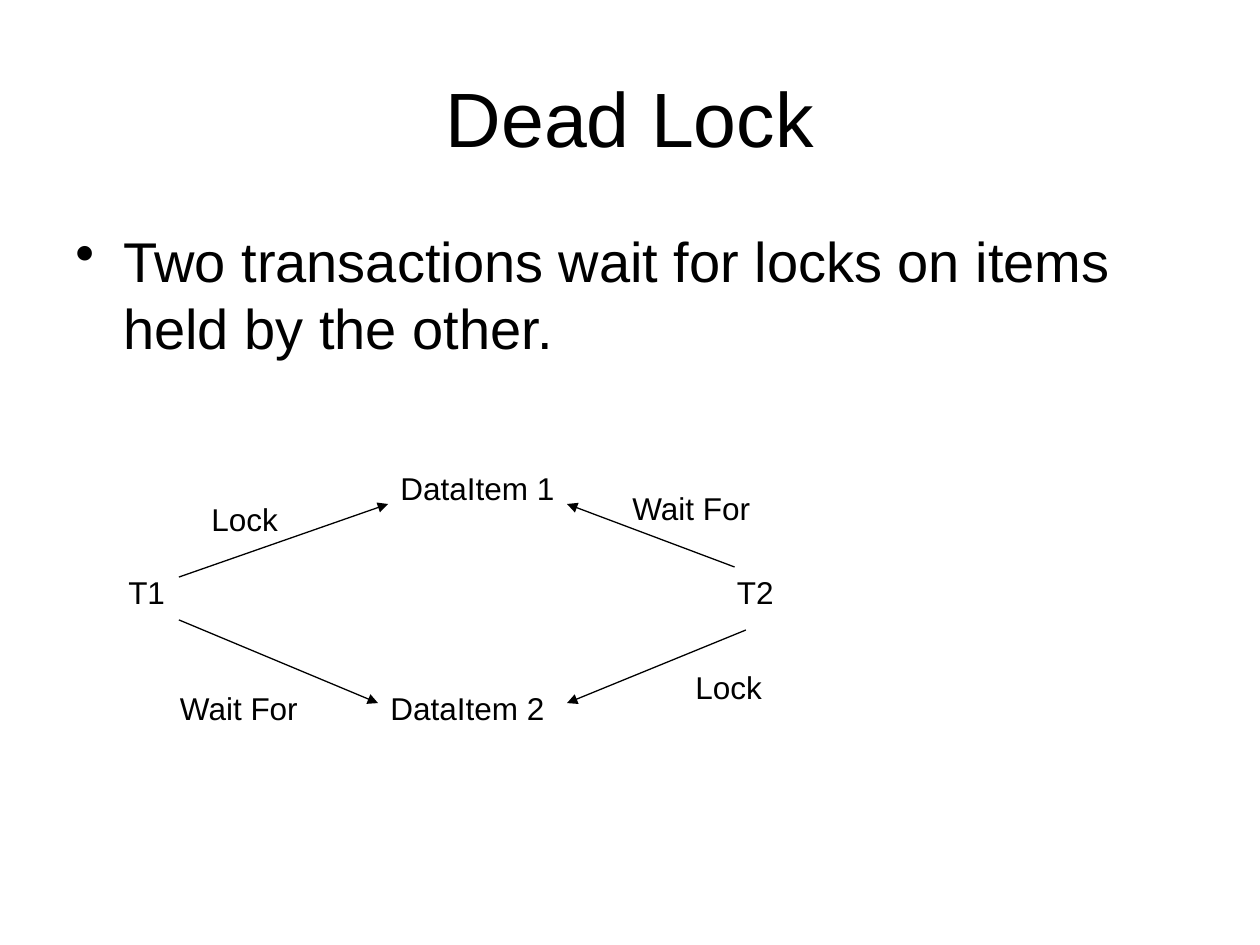
from pptx import Presentation
from pptx.dml.color import RGBColor
from pptx.enum.shapes import MSO_CONNECTOR as Link
from pptx.enum.text import MSO_ANCHOR as Anchor, PP_ALIGN as Align
from pptx.oxml.ns import qn
from pptx.util import Inches, Pt
from lxml.etree import SubElement

BLACK = RGBColor(0, 0, 0)

deck = Presentation()
deck.slide_width = Inches(10)
deck.slide_height = Inches(7.5)
slide = deck.slides.add_slide(deck.slide_layouts[6])


def add_text(text, left, top, width, height, size):
    box = slide.shapes.add_textbox(
        Inches(left), Inches(top), Inches(width), Inches(height))
    box.text_frame.word_wrap = True
    para = box.text_frame.paragraphs[0]
    para.text = text
    para.font.name = "Arial"
    para.font.size = Pt(size)
    para.font.color.rgb = BLACK
    return box.text_frame, para


frame, para = add_text("Dead Lock", 0.5, 0.3, 9, 1.25, 44)
frame.vertical_anchor = Anchor.MIDDLE
para.alignment = Align.CENTER

frame, para = add_text(
    "Two transactions wait for locks on items held by the other.",
    0.5, 1.75, 8.75, 1.17, 32)
para.space_before = Pt(3)
props = para._p.get_or_add_pPr()
props.set("marL", str(Inches(0.38)))
props.set("indent", str(-Inches(0.38)))
bullet = SubElement(props, qn("a:buChar"))
bullet.set("char", "•")
props.insert_element_before(bullet, "a:tabLst", "a:defRPr", "a:extLst")

labels = [
    ("T1", 0.92, 4.5, 0.83),
    ("T2", 5.75, 4.5, 1.42),
    ("DataItem 1", 3.08, 3.67, 1.75),
    ("DataItem 2", 3, 5.42, 2),
    ("Lock", 1.58, 3.92, 0.83),
    ("Wait For", 4.92, 3.83, 1.5),
    ("Wait For", 1.33, 5.42, 1.25),
    ("Lock", 5.42, 5.25, 1.08),
]
for text, left, top, width in labels:
    add_text(text, left, top, width, 0.4, 18)

arrows = [
    (1.42, 4.58, 3.08, 4),
    (5.83, 4.5, 4.5, 4),
    (1.42, 4.92, 3, 5.58),
    (5.92, 5, 4.5, 5.58),
]
for ends in arrows:
    arrow = slide.shapes.add_connector(Link.STRAIGHT, *map(Inches, ends))
    arrow.line.color.rgb = BLACK
    arrow.line.width = Pt(0.75)
    SubElement(arrow.line._get_or_add_ln(), qn("a:tailEnd")).set("type", "triangle")
    SubElement(arrow._element.spPr, qn("a:effectLst"))

deck.save("out.pptx")
